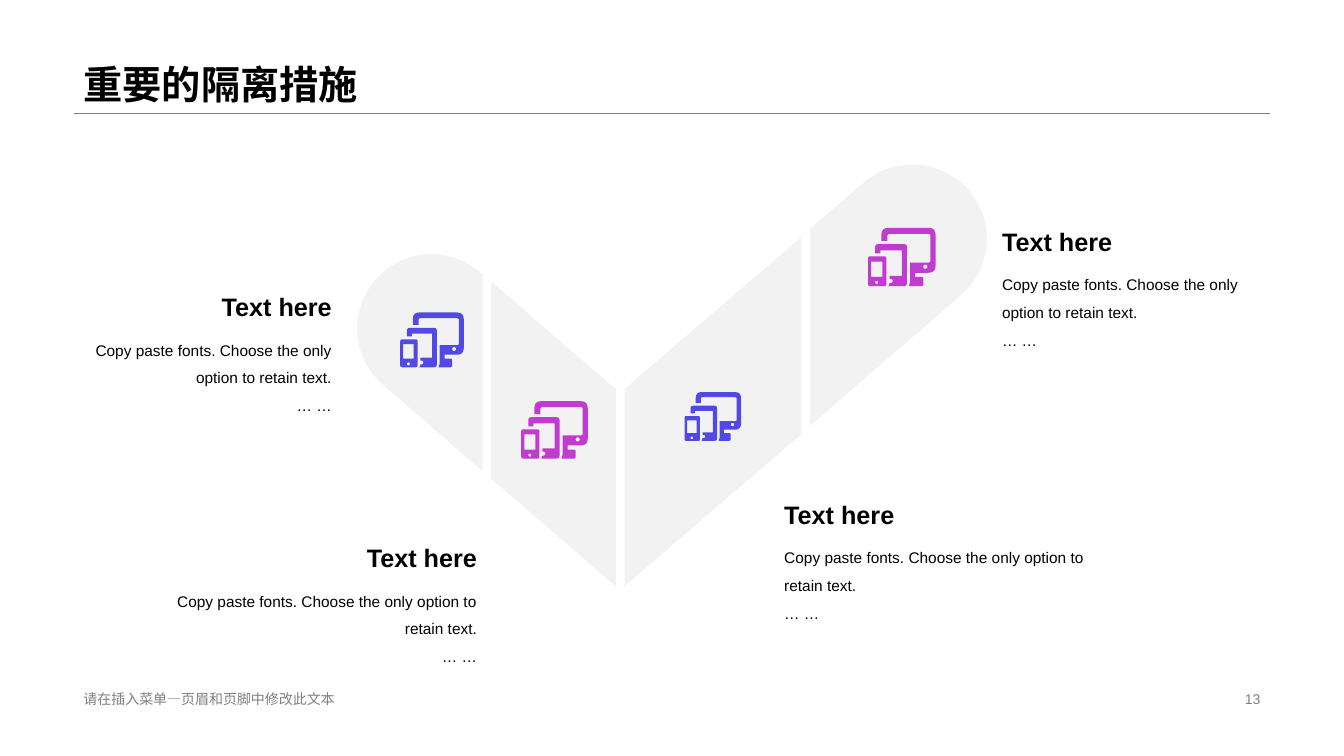
"""Build the slide of isolation measures: a four-part check mark with icons and captions."""
from math import cos, radians, sin

from lxml.etree import SubElement
from pptx import Presentation
from pptx.dml.color import RGBColor
from pptx.enum.shapes import MSO_CONNECTOR
from pptx.enum.text import MSO_ANCHOR, MSO_AUTO_SIZE, PP_ALIGN
from pptx.oxml.ns import qn
from pptx.util import Pt

PX = 9144
FINE = 100
LEFT, RIGHT = PP_ALIGN.LEFT, PP_ALIGN.RIGHT
TOP, MID, LOW = MSO_ANCHOR.TOP, MSO_ANCHOR.MIDDLE, MSO_ANCHOR.BOTTOM
hue = RGBColor.from_string


def write(box, place, lines, size, align, anchor, tint="000000", bold=False, space=1.0):
    """Place a text shape and fill it, one paragraph a line."""
    box.left, box.top, box.width, box.height = [v * PX for v in place]
    frame = box.text_frame
    frame.word_wrap = True
    frame.auto_size = MSO_AUTO_SIZE.NONE
    frame.vertical_anchor = anchor
    for i, line in enumerate(lines):
        para = frame.add_paragraph() if i else frame.paragraphs[0]
        para.alignment = align
        para.line_spacing = space
        run = para.add_run()
        run.text = line
        font = run.font
        font.name, font.size, font.bold = "Arial", Pt(size), bold
        font.color.rgb = hue(tint)


def draw(rings, left, top, zoom, tint):
    """Draw closed rings as one filled outline."""
    rings = [[(x * FINE, y * FINE) for x, y in ring] for ring in rings]
    pen = shapes.build_freeform(*rings[0][0], scale=PX * zoom / FINE)
    pen.add_line_segments(rings[0][1:], close=True)
    for ring in rings[1:]:
        pen.move_to(*ring[0])
        pen.add_line_segments(ring[1:], close=True)
    form = pen.convert_to_shape(round(left * PX), round(top * PX))
    form.shadow.inherit = False
    form.fill.solid()
    form.fill.fore_color.rgb = hue(tint)
    form.line.fill.background()
    return form


deck = Presentation()
deck.slide_width, deck.slide_height = 1333 * PX, 750 * PX
slide = deck.slides.add_slide(deck.slide_layouts[5])
shapes = slide.shapes

rule = shapes.add_connector(MSO_CONNECTOR.STRAIGHT, 73 * PX, 112 * PX, 1260 * PX, 112 * PX)
rule.line.color.rgb = hue("808080")
rule.line.width = Pt(0.25)
SubElement(rule._element.spPr, qn("a:effectLst"))

write(shapes.title, (73, 0, 1187, 112), ["重要的隔离措施"], 28, LEFT, LOW, bold=True, space=0.9)
for place, note, align in (
    ((73, 682, 453, 23), "请在插入菜单—页眉和页脚中修改此文本", LEFT),
    ((942, 682, 318, 23), "13", RIGHT),
):
    write(shapes.add_textbox(0, 0, 0, 0), place, [note], 10, align, MID, "808080")

caps = [
    [(x + 78 * cos(radians(start + turn)), y + 78 * sin(radians(start + turn)))
     for turn in range(0, 181, 5)]
    for x, y, start in ((428, 326, 131), (905, 237, 229))
]
for part in (
    caps[0] + [(483, 270), (483, 477)],
    [(800, 225), (800, 432), (615, 591), (615, 384)],
    caps[1] + [(799, 432), (799, 225)],
    [(483, 270), (615, 384), (615, 591), (483, 477)],
):
    form = draw([part], 0, 0, 1, "F2F2F2")
    form.line.color.rgb = hue("FFFFFF")
    form.line.width = Pt(6)

phone = [(0, 28, 2), (18, 28, 2), (18, 57, 2), (0, 57, 2)]
screen = [(3, 33, 0), (14, 33, 0), (14, 48, 0), (3, 48, 0)]
key = [(7, 52, 1.5), (10, 52, 1.5), (10, 55, 1.5), (7, 55, 1.5)]
lamp = [(54, 36, 2), (58, 36, 2), (58, 40, 2), (54, 40, 2)]
pad = [(7, 16, 3), (38, 16, 3), (38, 57, 3), (20, 57, 0), (21, 54, 0), (24, 54, 2),
       (24, 50, 2), (21, 50, 0), (21, 47, 0), (33, 47, 0), (33, 22, 0), (12, 22, 0),
       (12, 25, 0), (7, 25, 0)]
desk = [(13, 0, 7), (66, 0, 7), (66, 44, 7), (46, 44, 0), (46, 48, 0), (54, 48, 2),
        (54, 57, 2), (40, 57, 0), (41, 53, 0), (41, 34, 0), (61, 34, 2), (61, 6, 2),
        (19, 6, 2), (19, 13, 0), (13, 13, 0)]
icon = []
for plan in (key, lamp, screen, phone, pad, desk):
    ring = []
    for i, (x, y, bend) in enumerate(plan):
        ends = []
        for px, py, _ in (plan[i - 1], plan[(i + 1) % len(plan)]):
            part = bend / max(abs(px - x), abs(py - y))
            ends.append((x + (px - x) * part, y + (py - y) * part))
        (ax, ay), (bx, by) = ends
        for t in (0, 0.25, 0.5, 0.75, 1) if bend else (0,):
            s = 1 - t
            ring.append((s * s * ax + 2 * s * t * x + t * t * bx,
                         s * s * ay + 2 * s * t * y + t * t * by))
    icon.append(ring)

for left, top, width, tint in (
    (679, 389, 56, "5248E4"),
    (517, 398, 66, "BF3CCF"),
    (397, 310, 63, "5248E4"),
    (861, 226, 67, "BF3CCF"),
):
    draw(icon, left, top, width / 66, tint)

body = ["Copy paste fonts. Choose the only option to retain text.", "… …"]
for left, top, width, align in (
    (984, 200, 276, LEFT),
    (768, 471, 344, LEFT),
    (139, 514, 344, RIGHT),
    (72, 265, 267, RIGHT),
):
    head = shapes.add_textbox(0, 0, 0, 0)
    write(head, (left, top, width, 59), ["Text here"], 18, align, LOW, bold=True)
    text = shapes.add_textbox(0, 0, 0, 0)
    write(text, (left, top + 59, width, 98), body, 11, align, TOP, space=1.5)

deck.save("out.pptx")
